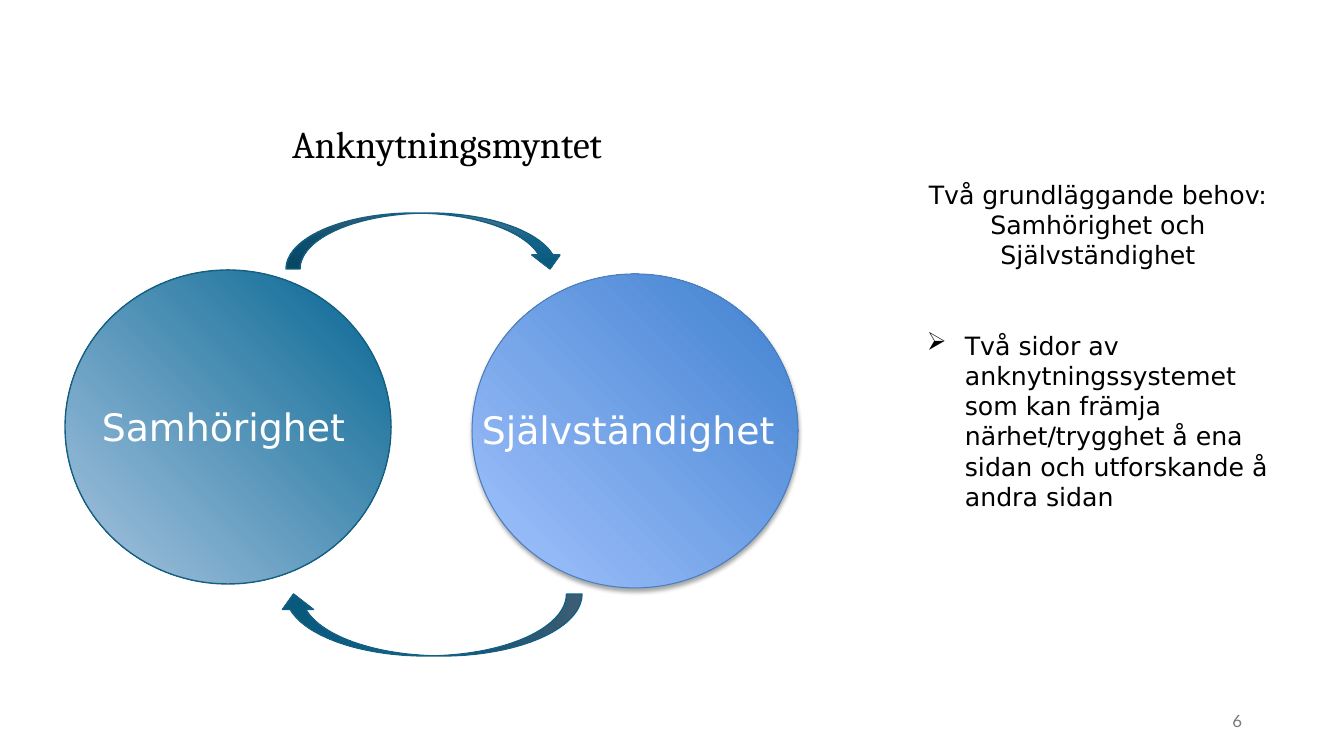
from lxml import etree
from pptx import Presentation
from pptx.dml.color import RGBColor
from pptx.enum.shapes import MSO_SHAPE as Shape
from pptx.enum.text import MSO_ANCHOR as Anchor, MSO_AUTO_SIZE as AutoSize, PP_ALIGN as Align
from pptx.oxml import parse_xml
from pptx.oxml.ns import qn
from pptx.util import Emu, Pt

# Content
TITLE = "Anknytningsmyntet"
NEEDS = "Två grundläggande behov: Samhörighet och Självständighet"
SIDES = ("Två sidor av anknytningssystemet som kan främja närhet/trygghet "
         "å ena sidan och utforskande å andra sidan")
PAGE_NUMBER = "6"

BLACK = RGBColor(0x00, 0x00, 0x00)
WHITE = RGBColor(0xFF, 0xFF, 0xFF)
GREY = RGBColor(0x79, 0x79, 0x79)
TEAL_LINE = RGBColor(0x15, 0x60, 0x82)
BLUE_LINE = RGBColor(0x4B, 0x7E, 0xBC)
TEAL_DARK = RGBColor(0x05, 0x66, 0x92)
TEAL_LIGHT = RGBColor(0xA9, 0xC5, 0xE1)
BLUE_DARK = RGBColor(0x3F, 0x80, 0xCE)
BLUE_LIGHT = RGBColor(0xA4, 0xC4, 0xFF)
ARROW_COLORS = [RGBColor(0x4C, 0x75, 0x91), RGBColor(0x10, 0x62, 0x87),
                RGBColor(0x09, 0x59, 0x7D)]

LINEAR = '<a:lin ang="{}" scaled="0"/>'
FROM_TOP_RIGHT = '<a:path path="circle"><a:fillToRect l="100000" b="100000"/></a:path>'
DIAGONAL, DOWN = LINEAR.format(135 * 60000), LINEAR.format(90 * 60000)

# Kind, box in px, rotation, gradient colours, gradient direction, line, line width in pt
FIGURES = [
    (Shape.OVAL, (65, 270, 326, 314), 0, [TEAL_DARK, TEAL_LIGHT], DIAGONAL, TEAL_LINE, 1),
    (Shape.OVAL, (472, 274, 326, 314), 0, [BLUE_DARK, BLUE_LIGHT], FROM_TOP_RIGHT,
     BLUE_LINE, 0.75),
    (Shape.CURVED_DOWN_ARROW, (286, 213, 278, 56), 0, ARROW_COLORS, DOWN, TEAL_LINE, 1),
    (Shape.CURVED_LEFT_ARROW, (399, 473, 62, 304), 90, ARROW_COLORS, DOWN, TEAL_LINE, 1),
]
LABELS = [("Samhörighet", (92, 399, 272, 65)), ("Självständighet", (472, 402, 317, 58))]

DRAWING_NS = 'xmlns:a="http://schemas.openxmlformats.org/drawingml/2006/main"'
PX = 12700 * 72 / 100.8


def px(*lengths):
    return [Emu(round(length * PX)) for length in lengths]


def write(para, text, size=18, font="DejaVu Sans", color=BLACK, align=Align.LEFT):
    para.alignment = align
    span = para.add_run()
    span.text = text
    span.font.size, span.font.name = Pt(size), font
    span.font.color.rgb = color


def add_box(page, area, anchor=Anchor.TOP):
    frame = page.shapes.add_textbox(*px(*area)).text_frame
    frame.word_wrap = True
    frame.vertical_anchor = anchor
    return frame


def fill_gradient(shape, colors, direction):
    last = len(colors) - 1
    stops = "".join(f'<a:gs pos="{100000 * i // last}"><a:srgbClr val="{color}"/></a:gs>'
                    for i, color in enumerate(colors))
    gradient = parse_xml(f'<a:gradFill {DRAWING_NS} rotWithShape="1">'
                         f'<a:gsLst>{stops}</a:gsLst>{direction}</a:gradFill>')
    shape.element.spPr.find(qn("a:prstGeom")).addnext(gradient)


def add_shadow(shape):
    effects = shape.element.spPr.find(qn("a:effectLst"))
    effects.append(parse_xml(
        f'<a:outerShdw {DRAWING_NS} blurRad="39370" dist="22860" dir="5400000" '
        'rotWithShape="0"><a:srgbClr val="000000"><a:alpha val="35000"/>'
        '</a:srgbClr></a:outerShdw>'))


def add_bullet(para, sign, indent):
    props = para._p.get_or_add_pPr()
    props.set("marL", str(indent))
    props.set("indent", str(-indent))
    etree.SubElement(props, qn("a:buChar")).set("char", sign)


def main():
    deck = Presentation()
    deck.slide_width, deck.slide_height = px(1344, 756)
    page = deck.slides.add_slide(deck.slide_layouts[5])

    # Title
    title = page.shapes.title
    title.left, title.top, title.width, title.height = px(282, 112, 600, 62)
    title.text_frame.auto_size = AutoSize.NONE
    title.text_frame.vertical_anchor = Anchor.MIDDLE
    write(title.text_frame.paragraphs[0], TITLE, size=27, font="Cambria")

    # Two circles and the arrows between them
    figures = []
    for kind, area, rotation, colors, direction, line, width in FIGURES:
        figure = page.shapes.add_shape(kind, *px(*area))
        figure.rotation = rotation
        fill_gradient(figure, colors, direction)
        figure.line.color.rgb, figure.line.width = line, Pt(width)
        figure.shadow.inherit = False
        figures.append(figure)
    add_shadow(figures[1])
    for text, area in LABELS:
        write(add_box(page, area).paragraphs[0], text, size=27, color=WHITE)

    # Explanation
    explanation = add_box(page, (917, 174, 362, 346))
    write(explanation.paragraphs[0], NEEDS, align=Align.CENTER)
    sides = explanation.add_paragraph()
    write(sides, SIDES)
    sides.space_before = Pt(43)
    add_bullet(sides, "➢", px(38)[0])

    # Page number
    number = add_box(page, (950, 701, 302, 40), anchor=Anchor.MIDDLE)
    write(number.paragraphs[0], PAGE_NUMBER, size=12, font="Lato", color=GREY,
          align=Align.RIGHT)

    deck.save("out.pptx")


if __name__ == "__main__":
    main()
